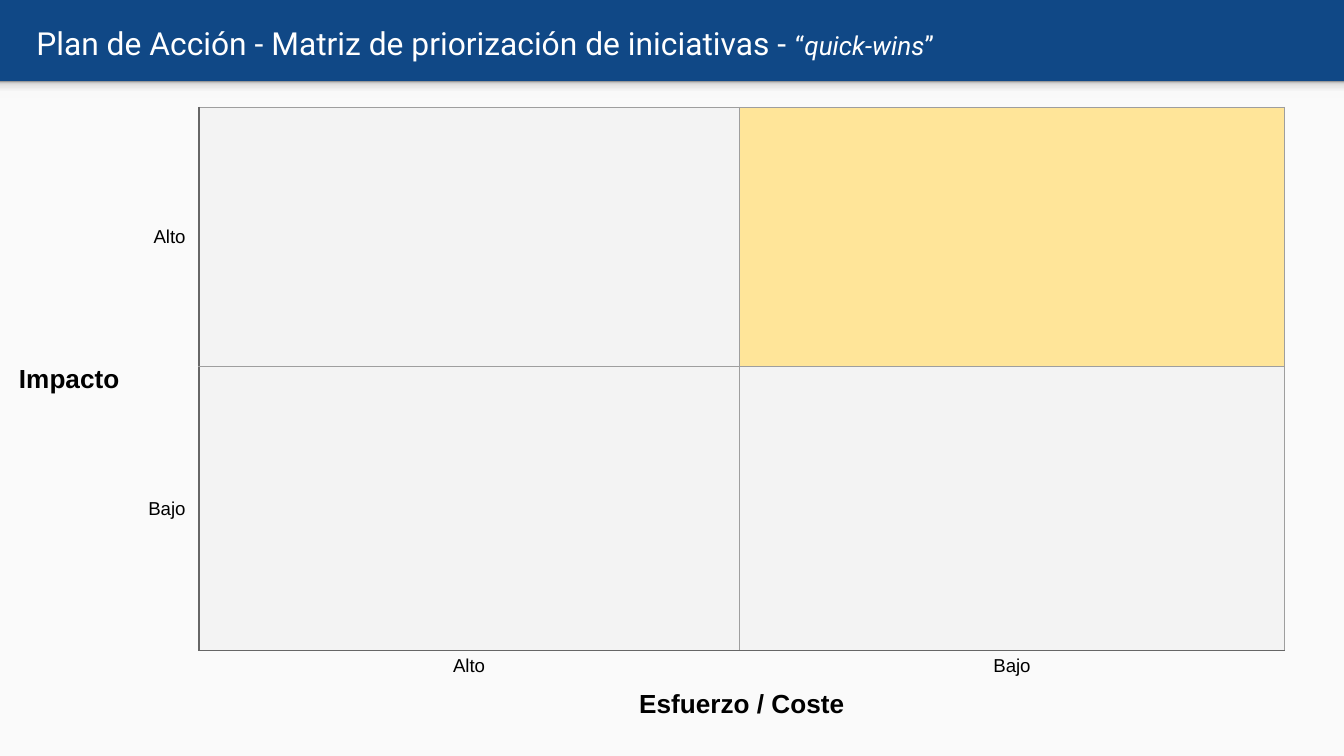
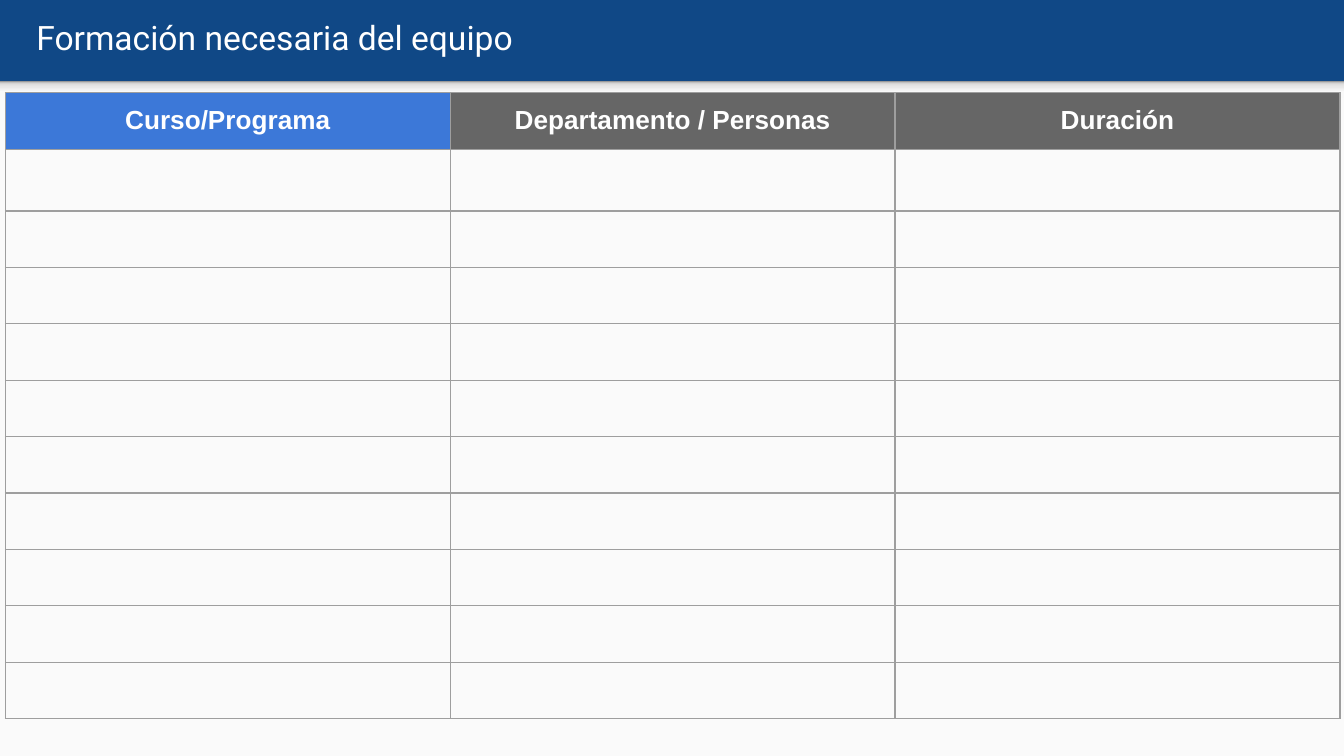
from lxml import etree
from pptx import Presentation
from pptx.dml.color import RGBColor
from pptx.enum.shapes import MSO_SHAPE
from pptx.enum.text import MSO_ANCHOR, MSO_AUTO_SIZE, PP_ALIGN
from pptx.oxml import parse_xml
from pptx.oxml.ns import nsdecls, qn
from pptx.util import Inches, Pt

RECTANGLE = MSO_SHAPE.RECTANGLE
TOP, MIDDLE = MSO_ANCHOR.TOP, MSO_ANCHOR.MIDDLE
LEFT, CENTER, RIGHT = PP_ALIGN.LEFT, PP_ALIGN.CENTER, PP_ALIGN.RIGHT

NAVY = RGBColor(0x10, 0x48, 0x86)
PAPER = RGBColor(0xFA, 0xFA, 0xFA)
WHITE = RGBColor(0xFF, 0xFF, 0xFF)
BLACK = RGBColor(0x00, 0x00, 0x00)
BLUE = RGBColor(0x3C, 0x78, 0xD8)
DARK_GRAY = RGBColor(0x66, 0x66, 0x66)
MID_GRAY = RGBColor(0x9E, 0x9E, 0x9E)
LIGHT_GRAY = RGBColor(0xF3, 0xF3, 0xF3)
YELLOW = RGBColor(0xFF, 0xE5, 0x99)

NO_GRID_STYLE = "{2D5ABB26-0587-4C30-8999-92F81FD0307C}"
SLIDE_W = 10
SLIDE_H = SLIDE_W * 9 / 16
TABLE_LEFT = 0.04
SHADE_STOPS = [(0, "F9F9F9"), (36, "F9F9F9"), (80, "DEDEDE"), (100, "999999")]


def add_plain_table(slide, top, columns, rows):
    """Add a table without style and with small type in its empty cells."""
    frame = slide.shapes.add_table(
        len(rows), len(columns), Inches(TABLE_LEFT), Inches(top),
        Inches(sum(columns)), Inches(sum(rows)))
    table = frame.table
    table.first_row = table.horz_banding = False
    frame.element.find(".//" + qn("a:tableStyleId")).text = NO_GRID_STYLE
    for column, width in zip(table.columns, columns):
        column.width = Inches(width)
    for row, height in zip(table.rows, rows):
        row.height = Inches(height)
    for cell in table.iter_cells():
        paragraph = cell.text_frame.paragraphs[0]._p
        etree.SubElement(paragraph, qn("a:endParaRPr"), sz="1000")
    return table


def format_cell(cell, text="", size=10, bold=False, color=BLACK, align=CENTER,
                anchor=MIDDLE, insets=(0.1, 0.1, 0.1, 0.1), fill=None, borders=None):
    """Insets run left, top, right, bottom; borders map L, R, T, B to colours."""
    for side, inset in zip(("left", "top", "right", "bottom"), insets):
        setattr(cell, "margin_" + side, Inches(inset))
    cell.vertical_anchor = anchor
    if text:
        paragraph = cell.text_frame.paragraphs[0]
        paragraph.alignment = align
        run = paragraph.add_run()
        run.text = text
        look = {"name": "Arial", "size": Pt(size), "bold": bold}
        for key, value in look.items():
            setattr(run.font, key, value)
        run.font.color.rgb = color
    for side in "LRTB":
        paint = "<a:noFill/>"
        if borders and side in borders:
            paint = f'<a:solidFill><a:srgbClr val="{borders[side]}"/></a:solidFill>'
        cell._tc.get_or_add_tcPr().append(parse_xml(
            f'<a:ln{side} {nsdecls("a")} w="{Pt(0.75)}">{paint}</a:ln{side}>'))
    if fill is not None:
        cell.fill.solid()
        cell.fill.fore_color.rgb = fill


prs = Presentation()
prs.slide_width, prs.slide_height = Inches(SLIDE_W), Inches(SLIDE_H)
layout = prs.slide_layouts[5]
layout.background.fill.solid()
layout.background.fill.fore_color.rgb = NAVY

# Titles: top, width and runs of (text, size, italic)
titles = [
    (0.04, 7.96, [("Plan de Acción - Matriz de priorización de iniciativas - ", 17, False),
                  ("“", 14, False), ("quick-wins", 14, True), ("”", 14, False)]),
    (0, 4.31, [("Formación necesaria del equipo", 18, False)]),
]
slides = []
for top, width, runs in titles:
    slide = prs.slides.add_slide(layout)
    slides.append(slide)
    title = slide.shapes.title
    box = {"left": 0.17, "top": top, "width": width, "height": 0.55}
    for key, value in box.items():
        setattr(title, key, Inches(value))
    frame = title.text_frame
    for side in ("left", "top", "right", "bottom"):
        setattr(frame, "margin_" + side, Inches(0.1))
    frame.vertical_anchor = MIDDLE
    frame.auto_size = MSO_AUTO_SIZE.NONE
    frame.word_wrap = True
    paragraph = frame.paragraphs[0]
    paragraph.alignment = LEFT
    for text, size, italic in runs:
        run = paragraph.add_run()
        run.text = text
        for key, value in {"name": "Roboto", "size": Pt(size), "italic": italic}.items():
            setattr(run.font, key, value)
        run.font.color.rgb = WHITE
matrix_slide, training_slide = slides

# Light page and shaded edge, moved to the layout that both slides share
bands = [(0.69, SLIDE_H - 0.69), (0.6, 0.13)]
for position, (top, height) in enumerate(bands):
    band = matrix_slide.shapes.add_shape(
        RECTANGLE, 0, Inches(top), Inches(SLIDE_W), Inches(height))
    band.shadow.inherit = False
    band.line.fill.background()
    if position == 0:
        band.fill.solid()
        band.fill.fore_color.rgb = PAPER
    else:
        band.fill.gradient()
        band.fill.gradient_angle = 90
        stops = band.element.find(".//" + qn("a:gsLst"))
        stops.clear()
        for share, color in SHADE_STOPS:
            stop = etree.SubElement(stops, qn("a:gs"), pos=str(share * 1000))
            etree.SubElement(stop, qn("a:srgbClr"), val=color)
    layout.shapes.element.insert(2 + position, band.element)

# Slide 1: impact against effort
matrix = add_plain_table(matrix_slide, 0.8, [0.95, 0.49, 4.02, 4.06],
                         [1.93, 2.11, 0.29, 0.46])
matrix.cell(0, 0).merge(matrix.cell(1, 0))
matrix.cell(3, 2).merge(matrix.cell(3, 3))
format_cell(matrix.cell(0, 0), "Impacto", size=14, bold=True)
for level, label in enumerate(["Alto", "Bajo"]):
    format_cell(matrix.cell(level, 1), label, align=RIGHT, borders={"R": DARK_GRAY})
    format_cell(matrix.cell(2, 2 + level), label, anchor=TOP,
                insets=(0.1, 0.04, 0.1, 0), borders={"T": DARK_GRAY})
    for effort in range(2):
        quick_win = (level, effort) == (0, 1)
        edges = {"L": MID_GRAY if effort else DARK_GRAY, "R": MID_GRAY,
                 "T": MID_GRAY, "B": DARK_GRAY if level else MID_GRAY}
        format_cell(matrix.cell(level, 2 + effort), borders=edges,
                    fill=YELLOW if quick_win else LIGHT_GRAY)
format_cell(matrix.cell(3, 2), "Esfuerzo / Coste", size=14, bold=True,
            anchor=TOP, insets=(0, 0, 0, 0))
format_cell(matrix.cell(3, 3))

# Slide 2: training plan
headings = [("Curso/Programa", BLUE), ("Departamento / Personas", DARK_GRAY),
            ("Duración", DARK_GRAY)]
training = add_plain_table(training_slide, 0.69, [3.31] * len(headings),
                           [0.42, 0.46] + [0.42] * 9)
grid = dict.fromkeys("LRTB", MID_GRAY)
for column, (heading, fill) in enumerate(headings):
    format_cell(training.cell(0, column), heading, size=14, bold=True, color=WHITE,
                anchor=TOP, fill=fill, borders=grid)
    for row in range(1, len(training.rows)):
        format_cell(training.cell(row, column), anchor=TOP, borders=grid)

prs.save("out.pptx")
